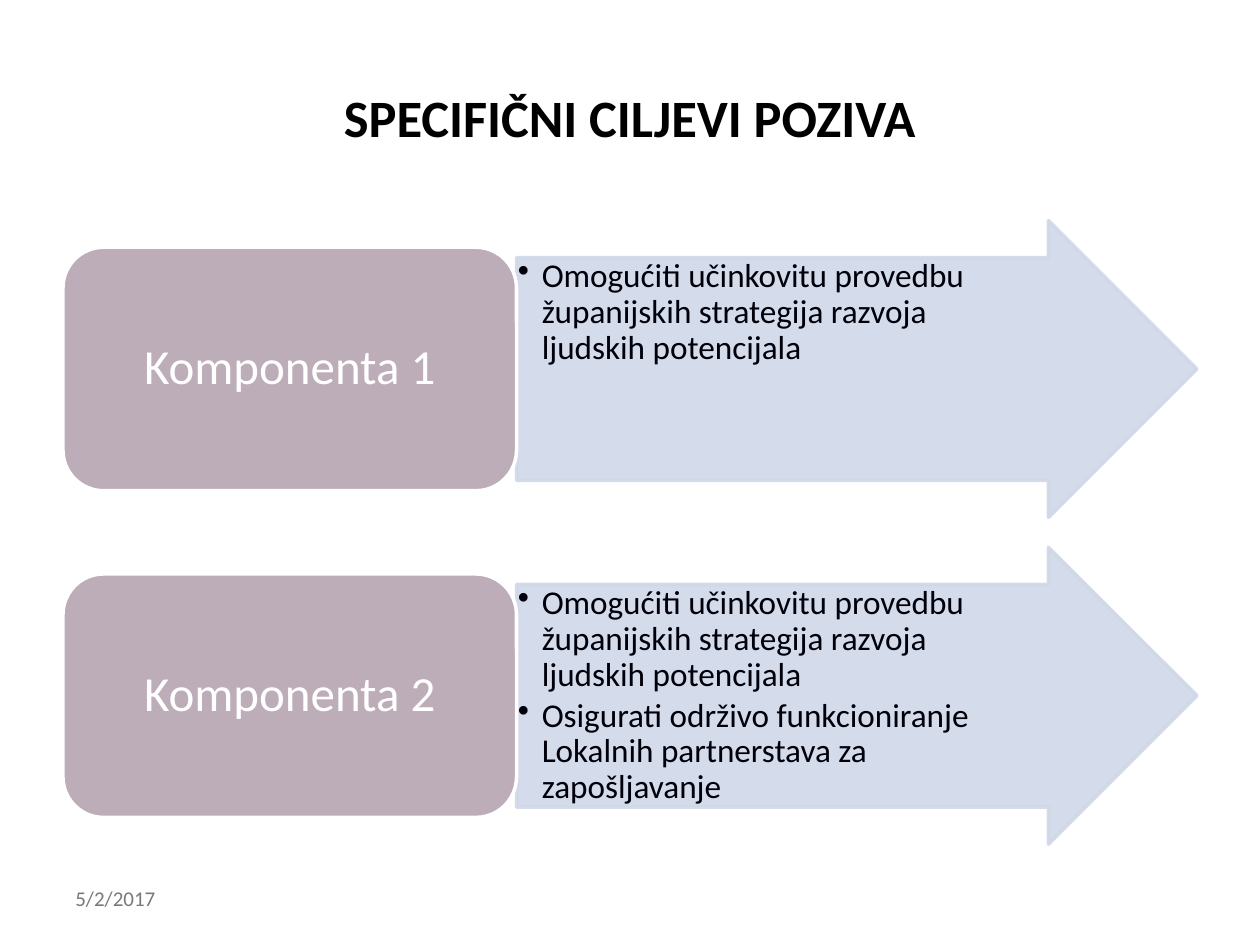
import collections
import dataclasses

import lxml.etree
import pptx
import pptx.dml.color
import pptx.enum.shapes
import pptx.enum.text
import pptx.oxml.ns
import pptx.util

Box = collections.namedtuple("Box", "left top width height")
SHAPES = pptx.enum.shapes.MSO_SHAPE
ALIGN = pptx.enum.text.PP_ALIGN
ANCHOR = pptx.enum.text.MSO_ANCHOR


@dataclasses.dataclass(frozen=True)
class Theme:
    """Colours, font and type sizes of the deck."""

    font: str = "Calibri"
    ink: str = "000000"
    goal_ink: str = "00000A"
    muted: str = "777877"
    white: str = "FFFFFF"
    arrow: str = "D0D8E8"
    label: str = "BDADB8"
    arrow_opacity: int = 90
    outline: float = 2
    title_size: float = 30
    label_size: float = 28
    goal_size: float = 19
    date_size: float = 12


THEME = Theme()
STRATEGY = "Omogućiti učinkovitu provedbu županijskih strategija razvoja ljudskih potencijala"
PARTNERSHIPS = "Osigurati održivo funkcioniranje Lokalnih partnerstava za zapošljavanje"
COMPONENTS = [
    ("Komponenta 1", [STRATEGY]),
    ("Komponenta 2", [STRATEGY, PARTNERSHIPS]),
]


def emu(box):
    """Return the four lengths of a box in inches as slide units."""
    return [pptx.util.Inches(length) for length in box]


def rgb(colour):
    """Return a colour object for a hex string."""
    return pptx.dml.color.RGBColor.from_string(colour)


def style(para, size, colour, bold=False, align=ALIGN.LEFT):
    """Format a paragraph and its runs."""
    para.alignment = align
    for span in para.runs:
        span.font.name = THEME.font
        span.font.size = pptx.util.Pt(size)
        span.font.bold = bold
        span.font.color.rgb = rgb(colour)


def set_insets(frame, left, top, right, bottom):
    """Set the inner margins of a text frame in inches."""
    frame.margin_left, frame.margin_top, frame.margin_right, frame.margin_bottom = emu(
        (left, top, right, bottom)
    )


def add_panel(page, kind, box, fill, line):
    """Add a flat filled shape with an outline and wrapped text."""
    shape = page.shapes.add_shape(kind, *emu(box))
    shape.shadow.inherit = False
    shape.fill.solid()
    shape.fill.fore_color.rgb = rgb(fill)
    shape.line.color.rgb = rgb(line)
    shape.line.width = pptx.util.Pt(THEME.outline)
    shape.text_frame.word_wrap = True
    return shape


def set_opacity(shape, percent):
    """Make the fill and the outline of a shape partly transparent."""
    tag = pptx.oxml.ns.qn("a:srgbClr")
    for colour in shape.fill._xPr.iter(tag):
        alpha = lxml.etree.SubElement(colour, pptx.oxml.ns.qn("a:alpha"))
        alpha.set("val", str(percent * 1000))


def add_bullet(para, indent):
    """Give a paragraph a round bullet with a hanging indent in inches."""
    properties = para._p.get_or_add_pPr()
    properties.set("marL", str(pptx.util.Inches(indent)))
    properties.set("indent", str(-pptx.util.Inches(indent)))
    bullet = lxml.etree.SubElement(properties, pptx.oxml.ns.qn("a:buChar"))
    bullet.set("char", "•")


def add_line(page, box, text, size, colour, anchor, **options):
    """Add a text box holding one paragraph."""
    frame = page.shapes.add_textbox(*emu(box)).text_frame
    frame.word_wrap = True
    frame.vertical_anchor = anchor
    frame.text = text
    style(frame.paragraphs[0], size, colour, **options)


def add_goals(page, box, goals):
    """Draw the arrow that lists the goals of a component."""
    arrow = add_panel(page, SHAPES.RIGHT_ARROW, box, THEME.arrow, THEME.arrow)
    arrow.adjustments[0], arrow.adjustments[1] = 0.75, 0.5
    set_opacity(arrow, THEME.arrow_opacity)
    frame = arrow.text_frame
    frame.vertical_anchor = ANCHOR.TOP
    set_insets(frame, 0.01, 0.01, box.width * 0.11, 0.01)
    frame.text = "\n".join(goals)
    for para in frame.paragraphs:
        para.line_spacing = 0.9
        para.space_after = pptx.util.Pt(THEME.goal_size * 0.15)
        add_bullet(para, 0.19)
        style(para, THEME.goal_size, THEME.goal_ink)


def add_label(page, box, name):
    """Draw the rounded panel that names a component."""
    label = add_panel(page, SHAPES.ROUNDED_RECTANGLE, box, THEME.label, THEME.white)
    frame = label.text_frame
    frame.vertical_anchor = ANCHOR.MIDDLE
    set_insets(frame, 0.12, 0.06, 0.12, 0.06)
    frame.text = name
    frame.paragraphs[0].line_spacing = 0.9
    style(frame.paragraphs[0], THEME.label_size, THEME.white, align=ALIGN.CENTER)


def add_components(page, box):
    """Stack one row per component, with gaps of a tenth of a row."""
    gap = 0.1
    count = len(COMPONENTS)
    row = box.height / (count + gap * (count - 1))
    label_width, label_height = box.width * 0.4, row * 0.82
    for index, (name, goals) in enumerate(COMPONENTS):
        top = box.top + index * row * (1 + gap)
        add_goals(page, Box(box.left + label_width, top, box.width - label_width, row), goals)
        label_top = top + (row - label_height) / 2
        add_label(page, Box(box.left, label_top, label_width, label_height), name)


def build_page(page, box):
    """Place the date, the title and the components on the page."""
    left, width = box.width * 0.05, box.width * 0.9
    add_line(page, Box(left, box.height * 0.93, width * 0.26, 0.4), "5/2/2017",
             THEME.date_size, THEME.muted, ANCHOR.TOP)
    add_line(page, Box(left, box.height * 0.04, width, box.height / 6), "SPECIFIČNI CILJEVI POZIVA",
             THEME.title_size, THEME.ink, ANCHOR.MIDDLE, bold=True, align=ALIGN.CENTER)
    add_components(page, Box(left, 1.75, width, box.height * 0.66))


def main():
    """Build the deck and save it."""
    box = Box(0, 0, 10, 7.5)
    deck = pptx.Presentation()
    deck.slide_width, deck.slide_height = emu((box.width, box.height))
    build_page(deck.slides.add_slide(deck.slide_layouts[6]), box)
    deck.save("out.pptx")


if __name__ == "__main__":
    main()
